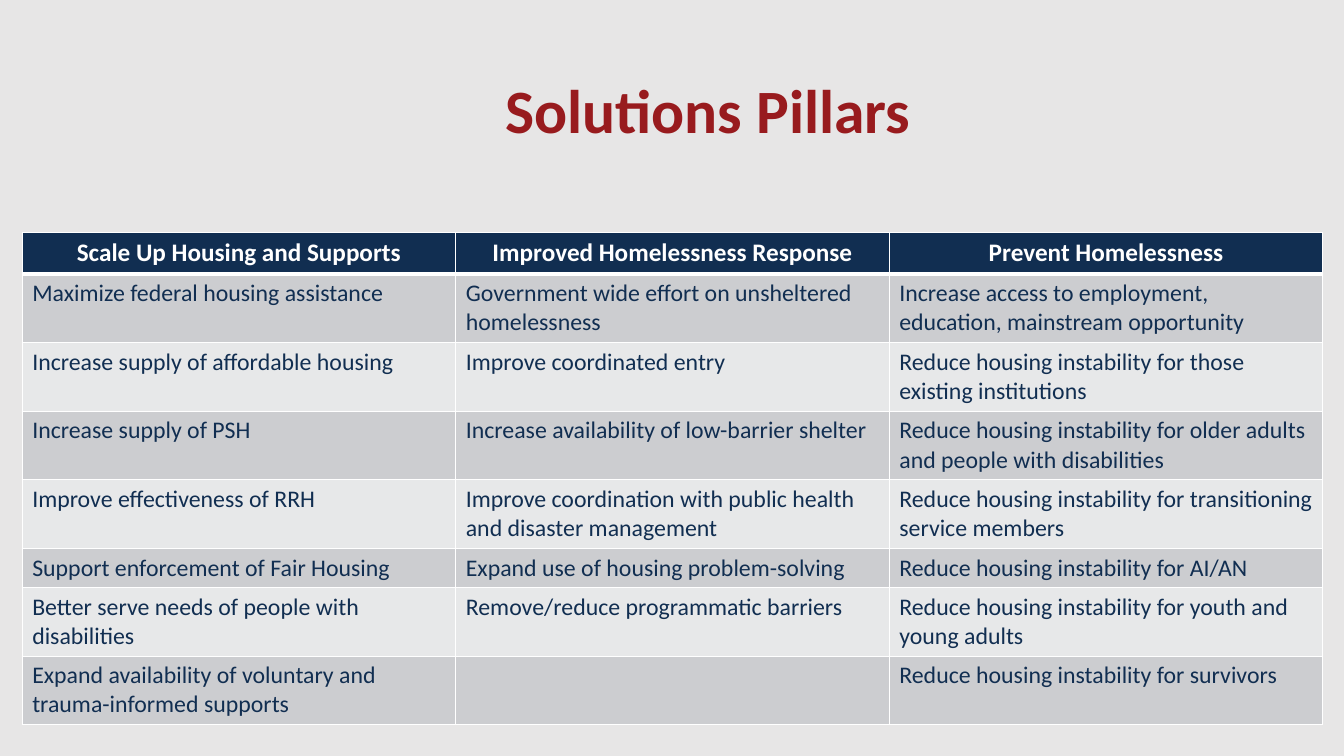
from dataclasses import dataclass

from lxml.etree import SubElement
from pptx import Presentation
from pptx.dml.color import RGBColor
from pptx.enum.text import MSO_ANCHOR, PP_ALIGN
from pptx.oxml.ns import qn
from pptx.util import Inches, Pt


@dataclass(frozen=True)
class Theme:
    font: str = "Calibri"
    background: str = "E7E6E6"
    title: str = "981B1E"
    navy: str = "112E51"
    white: str = "FFFFFF"
    bands: tuple = ("CCCDD0", "E7E8E9")
    title_size: int = 44
    header_size: int = 18
    body_size: int = 17
    border: int = 1
    header_rule: int = 3


HEADERS = ("Scale Up Housing and Supports", "Improved Homelessness Response",
           "Prevent Homelessness")
SOLUTIONS = (
    ("Maximize federal housing assistance",
     "Government wide effort on unsheltered homelessness",
     "Increase access to employment, education, mainstream opportunity"),
    ("Increase supply of affordable housing",
     "Improve coordinated entry",
     "Reduce housing instability for those existing institutions"),
    ("Increase supply of PSH",
     "Increase availability of low-barrier shelter",
     "Reduce housing instability for older adults and people with disabilities"),
    ("Improve effectiveness of RRH",
     "Improve coordination with public health and disaster management",
     "Reduce housing instability for transitioning service members"),
    ("Support enforcement of Fair Housing",
     "Expand use of housing problem-solving",
     "Reduce housing instability for AI/AN"),
    ("Better serve needs of people with disabilities",
     "Remove/reduce programmatic barriers",
     "Reduce housing instability for youth and young adults"),
    ("Expand availability of voluntary and trauma-informed supports",
     "",
     "Reduce housing instability for survivors"),
)
ROW_HEIGHTS = (0.41, 0.68, 0.68, 0.68, 0.68, 0.39, 0.68, 0.68)


class SlideBuilder:
    def __init__(self, slide, theme):
        self.slide = slide
        self.theme = theme
        fill = slide.background.fill
        fill.solid()
        fill.fore_color.rgb = RGBColor.from_string(theme.background)

    def style(self, p, size, color, bold=False, align=PP_ALIGN.LEFT):
        p.alignment = align
        p.font.name = self.theme.font
        p.font.size = Pt(size)
        p.font.bold = bold
        p.font.color.rgb = RGBColor.from_string(color)

    def title(self, text, left, top, width, height):
        box = self.slide.shapes.add_textbox(
            Inches(left), Inches(top), Inches(width), Inches(height))
        tf = box.text_frame
        tf.word_wrap = True
        tf.vertical_anchor = MSO_ANCHOR.MIDDLE
        p = tf.paragraphs[0]
        p.text = text
        p.line_spacing = 0.9
        self.style(p, self.theme.title_size, self.theme.title, True, PP_ALIGN.CENTER)

    def borders(self, cell, top, bottom):
        """Draw white cell edges; top and bottom are widths in points."""
        side = self.theme.border
        tc_pr = cell._tc.get_or_add_tcPr()
        for tag, width in (("lnL", side), ("lnR", side), ("lnT", top), ("lnB", bottom)):
            ln = SubElement(tc_pr, qn(f"a:{tag}"), w=str(Pt(width)))
            solid = SubElement(ln, qn("a:solidFill"))
            SubElement(solid, qn("a:srgbClr"), val=self.theme.white)

    def cell(self, cell, text, row):
        theme = self.theme
        self.borders(cell,
                     theme.header_rule if row == 1 else theme.border,
                     theme.header_rule if row == 0 else theme.border)
        cell.fill.solid()
        color = theme.bands[(row - 1) % 2] if row else theme.navy
        cell.fill.fore_color.rgb = RGBColor.from_string(color)
        p = cell.text_frame.paragraphs[0]
        if text:
            p.text = text
        if row:
            self.style(p, theme.body_size, theme.navy)
        else:
            self.style(p, theme.header_size, theme.white, True, PP_ALIGN.CENTER)

    def table(self, rows, heights, left, top, width):
        table = self.slide.shapes.add_table(
            len(rows), len(rows[0]), Inches(left), Inches(top),
            Inches(width), Inches(sum(heights))).table
        for row, (texts, height) in enumerate(zip(rows, heights)):
            table.rows[row].height = Inches(height)
            for col, text in enumerate(texts):
                self.cell(table.cell(row, col), text, row)


def main():
    prs = Presentation()
    prs.slide_width = Inches(13.33)
    prs.slide_height = Inches(7.5)
    builder = SlideBuilder(prs.slides.add_slide(prs.slide_layouts[6]), Theme())
    builder.title("Solutions Pillars", 1.58, 0.4, 10.89, 1.45)
    builder.table((HEADERS, *SOLUTIONS), ROW_HEIGHTS, 0.22, 2.31, 12.9)
    prs.save("out.pptx")


if __name__ == "__main__":
    main()
